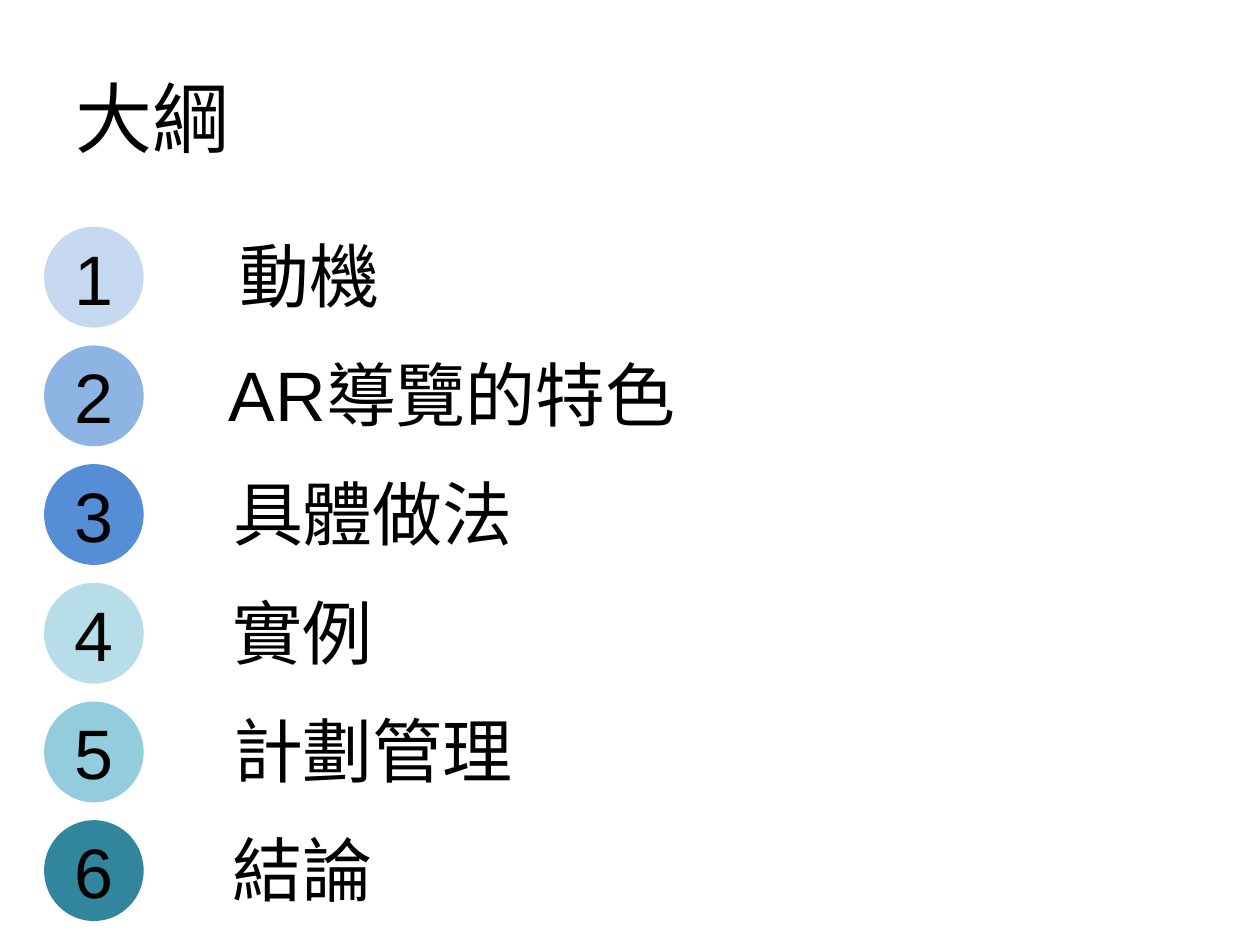
from pptx import Presentation
from pptx.dml.color import RGBColor
from pptx.enum.lang import MSO_LANGUAGE_ID
from pptx.enum.shapes import MSO_SHAPE
from pptx.enum.text import MSO_ANCHOR, MSO_AUTO_SIZE, PP_ALIGN
from pptx.util import Inches, Pt

OVAL = MSO_SHAPE.OVAL
LEFT, CENTER, RIGHT = PP_ALIGN.LEFT, PP_ALIGN.CENTER, PP_ALIGN.RIGHT
TOP, MIDDLE = MSO_ANCHOR.TOP, MSO_ANCHOR.MIDDLE
GROW = MSO_AUTO_SIZE.SHAPE_TO_FIT_TEXT
CHINESE = MSO_LANGUAGE_ID.TRADITIONAL_CHINESE

# circle colour, topic, font, label left, label width, alignment
TOPICS = [
    ("C6D9F1", "動機", "Calibri", 0.35, 2.76, RIGHT),
    ("8EB4E3", "AR導覽的特色", "Arial", 1.46, 4.26, CENTER),
    ("558ED5", "具體做法", "Calibri", 0.83, 4.26, CENTER),
    ("B7DEE8", "實例", "Calibri", 0.27, 4.26, CENTER),
    ("93CDDD", "計劃管理", "Calibri", 0.83, 4.26, CENTER),
    ("31859C", "結論", "Calibri", 0.27, 4.26, CENTER),
]


def color(value):
    return RGBColor.from_string(value)


def write(tf, text, font="Calibri", size=40, align=CENTER, anchor=TOP, ink="000000"):
    tf.word_wrap = True
    tf.vertical_anchor = anchor
    p = tf.paragraphs[0]
    p.alignment = align
    r = p.add_run()
    r.text = text
    r.font.name = font
    r.font.size = Pt(size)
    r.font.color.rgb = color(ink)
    r.font.language_id = CHINESE


class Outline:
    """Numbered topics on evenly spaced rows of one slide."""
    first_row, pitch = 1.8, 0.942
    circle_left, circle_width, circle_height = 0.35, 0.79, 0.8
    label_height = 0.77

    def __init__(self, prs):
        self.s = prs.slides.add_slide(prs.slide_layouts[6])

    def row_top(self, row):
        return Inches(self.first_row + row * self.pitch)

    def title(self, text):
        sp = self.s.shapes.add_textbox(Inches(0.5), Inches(0.3), Inches(9), Inches(1.25))
        write(sp.text_frame, text, size=44, align=LEFT, anchor=MIDDLE)

    def label(self, row, text, font, left, width, align):
        sp = self.s.shapes.add_textbox(Inches(left), self.row_top(row),
                                       Inches(width), Inches(self.label_height))
        write(sp.text_frame, text, font=font, align=align)
        sp.text_frame.auto_size = GROW

    def circle(self, row, fill):
        sp = self.s.shapes.add_shape(OVAL, Inches(self.circle_left), self.row_top(row),
                                     Inches(self.circle_width), Inches(self.circle_height))
        sp.shadow.inherit = False
        sp.fill.solid()
        sp.fill.fore_color.rgb = color(fill)
        sp.line.fill.background()
        write(sp.text_frame, str(row + 1), font="Arial", anchor=MIDDLE)


def main():
    prs = Presentation()
    prs.slide_width, prs.slide_height = Inches(10), Inches(7.5)
    outline = Outline(prs)
    outline.title("大綱")
    for row, (fill, *label) in enumerate(TOPICS):
        outline.label(row, *label)
        outline.circle(row, fill)
    prs.save("out.pptx")


if __name__ == "__main__":
    main()
